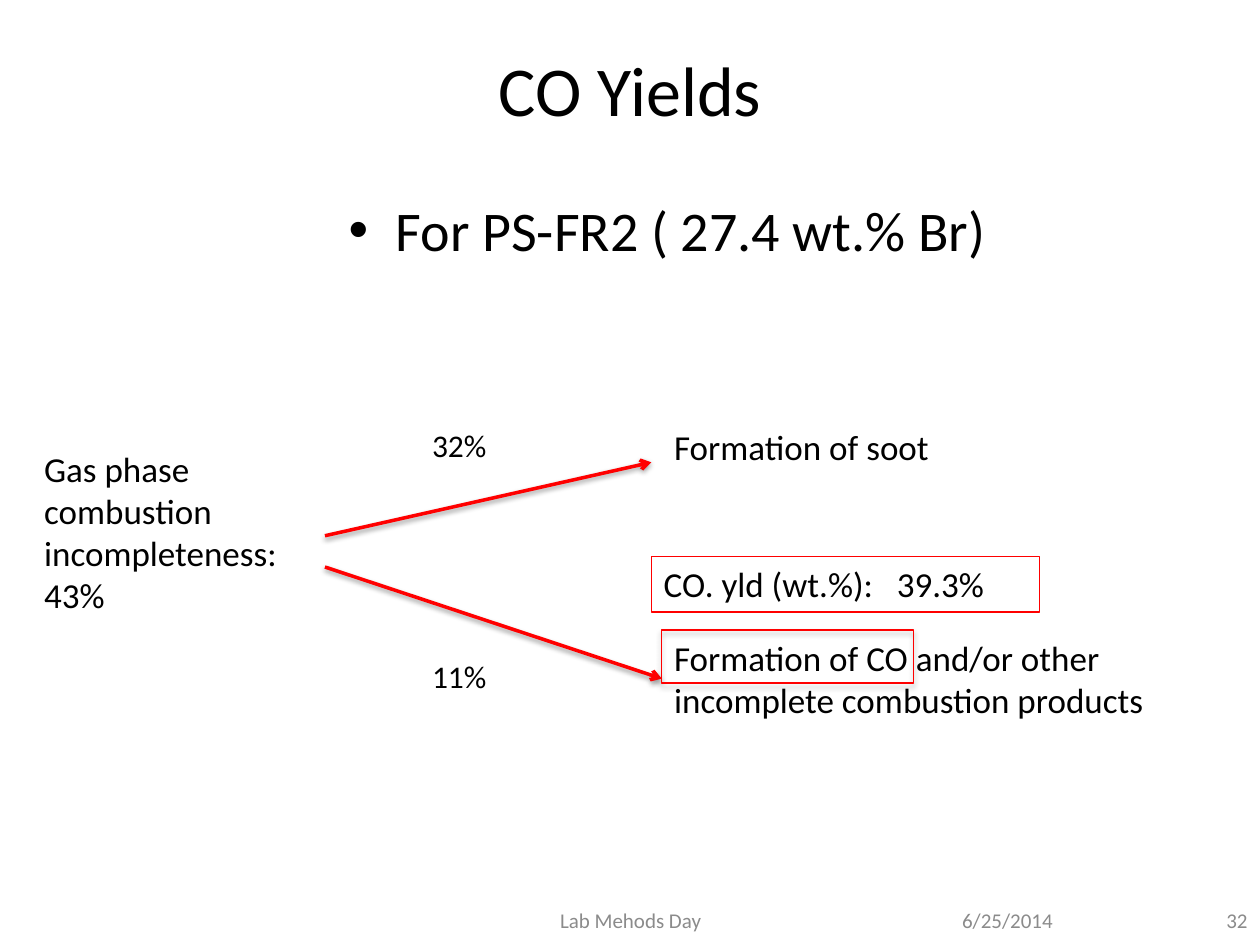
import pptx
import pptx.util
import pptx.dml.color
import pptx.enum.shapes
import pptx.enum.text
import pptx.oxml
import pptx.oxml.ns
from dataclasses import dataclass

Cm, Pt = pptx.util.Cm, pptx.util.Pt
RGB = pptx.dml.color.RGBColor
Align = pptx.enum.text.PP_ALIGN
Anchor = pptx.enum.text.MSO_ANCHOR
NS = pptx.oxml.ns.nsdecls("a")


@dataclass(frozen=True)
class Theme:
    font: str = "Calibri"
    ink: RGB = RGB(0x00, 0x00, 0x00)
    muted: RGB = RGB(0x8B, 0x8B, 0x8B)
    accent: RGB = RGB(0xFF, 0x00, 0x00)
    title: int = 40
    bullet: int = 32
    label: int = 20
    share: int = 18
    footer: int = 12


theme = Theme()
deck = pptx.Presentation()
deck.slide_width, deck.slide_height = Cm(25.4), Cm(19.05)
slide = deck.slides.add_slide(deck.slide_layouts[6])


def add_text(text, left, top, width, height, size=theme.label, color=theme.ink,
             align=Align.LEFT, anchor=Anchor.TOP, bullet=False, tab=None):
    """Place a wrapped text box; lengths are in centimetres."""
    box = slide.shapes.add_textbox(Cm(left), Cm(top), Cm(width), Cm(height))
    frame = box.text_frame
    frame.word_wrap = True
    frame.vertical_anchor = anchor
    frame.text = text
    for paragraph in frame.paragraphs:
        paragraph.alignment = align
        properties = paragraph._p.get_or_add_pPr()
        if bullet:
            properties.set("marL", str(Cm(0.95)))
            properties.set("indent", str(Cm(-0.95)))
            properties.append(pptx.oxml.parse_xml(f'<a:buFont {NS} typeface="Arial"/>'))
            properties.append(pptx.oxml.parse_xml(f'<a:buChar {NS} char="•"/>'))
        if tab:
            properties.append(pptx.oxml.parse_xml(
                f'<a:tabLst {NS}><a:tab pos="{Cm(tab)}" algn="l"/></a:tabLst>'))
        for run in paragraph.runs:
            run.font.name = theme.font
            run.font.size = Pt(size)
            run.font.color.rgb = color
    return box


def add_soft_shadow(shape, opacity, distance):
    shape._element.spPr.append(pptx.oxml.parse_xml(
        f'<a:effectLst {NS}><a:outerShdw blurRad="{Pt(3.1)}" dist="{Pt(distance)}" '
        f'dir="5400000" rotWithShape="0"><a:srgbClr val="000000">'
        f'<a:alpha val="{opacity * 1000}"/></a:srgbClr></a:outerShdw></a:effectLst>'))


# Heading
add_text("CO Yields", 1.27, 0.2, 22.86, 3.18, size=theme.title,
         align=Align.CENTER, anchor=Anchor.MIDDLE)
add_text("For PS-FR2 ( 27.4 wt.% Br)", 6.78, 3.81, 18.42, 13.97,
         size=theme.bullet, bullet=True)

# Cause, outcomes and the share of each
add_text("Gas phase combustion incompleteness:\n43%", 0.64, 8.89, 5.28, 4.52)
add_text("Formation of soot", 13.34, 8.46, 7.82, 1.12)
co_outcome = add_text("Formation of CO and/or other incomplete combustion products",
                      13.34, 12.7, 11.23, 1.96)
for share, top in (("32%", 8.46), ("11%", 13.13)):
    add_text(share, 8.46, top, 2.5, 1.07, size=theme.share)

# Arrows from the cause to each outcome
for start_y, end_x, end_y, target in ((10.8, 13.13, 9.32, None),
                                      (11.43, 13.34, 13.68, co_outcome)):
    arrow = slide.shapes.add_connector(pptx.enum.shapes.MSO_CONNECTOR.STRAIGHT,
                                       Cm(6.55), Cm(start_y), Cm(end_x), Cm(end_y))
    if target:
        arrow.end_connect(target, 1)
    arrow.line.color.rgb = theme.accent
    arrow.line.width = Pt(2)
    arrow.line._get_or_add_ln().append(
        pptx.oxml.parse_xml(f'<a:tailEnd {NS} type="arrow"/>'))
    add_soft_shadow(arrow, opacity=38, distance=1.6)

# Frame around "Formation of CO" and the CO yield
co_frame = slide.shapes.add_shape(pptx.enum.shapes.MSO_SHAPE.RECTANGLE,
                                  Cm(13.34), Cm(12.7), Cm(5.08), Cm(1.07))
co_frame.fill.background()
co_yield = add_text("CO. yld (wt.%):\t39.3%", 13.13, 11.22, 7.82, 1.12, tab=4.7)
for framed in (co_frame, co_yield):
    framed.line.color.rgb = theme.accent
    framed.line.width = Pt(0.75)
add_soft_shadow(co_frame, opacity=35, distance=1.8)

# Footer
for text, left, width, align in (("Lab Mehods Day", 8.69, 8.05, Align.CENTER),
                                 ("6/25/2014", 17.35, 5.92, Align.CENTER),
                                 ("32", 24.13, 1.27, Align.RIGHT)):
    add_text(text, left, 18.03, width, 1.02, size=theme.footer, color=theme.muted,
             align=align, anchor=Anchor.MIDDLE)

deck.save("out.pptx")
